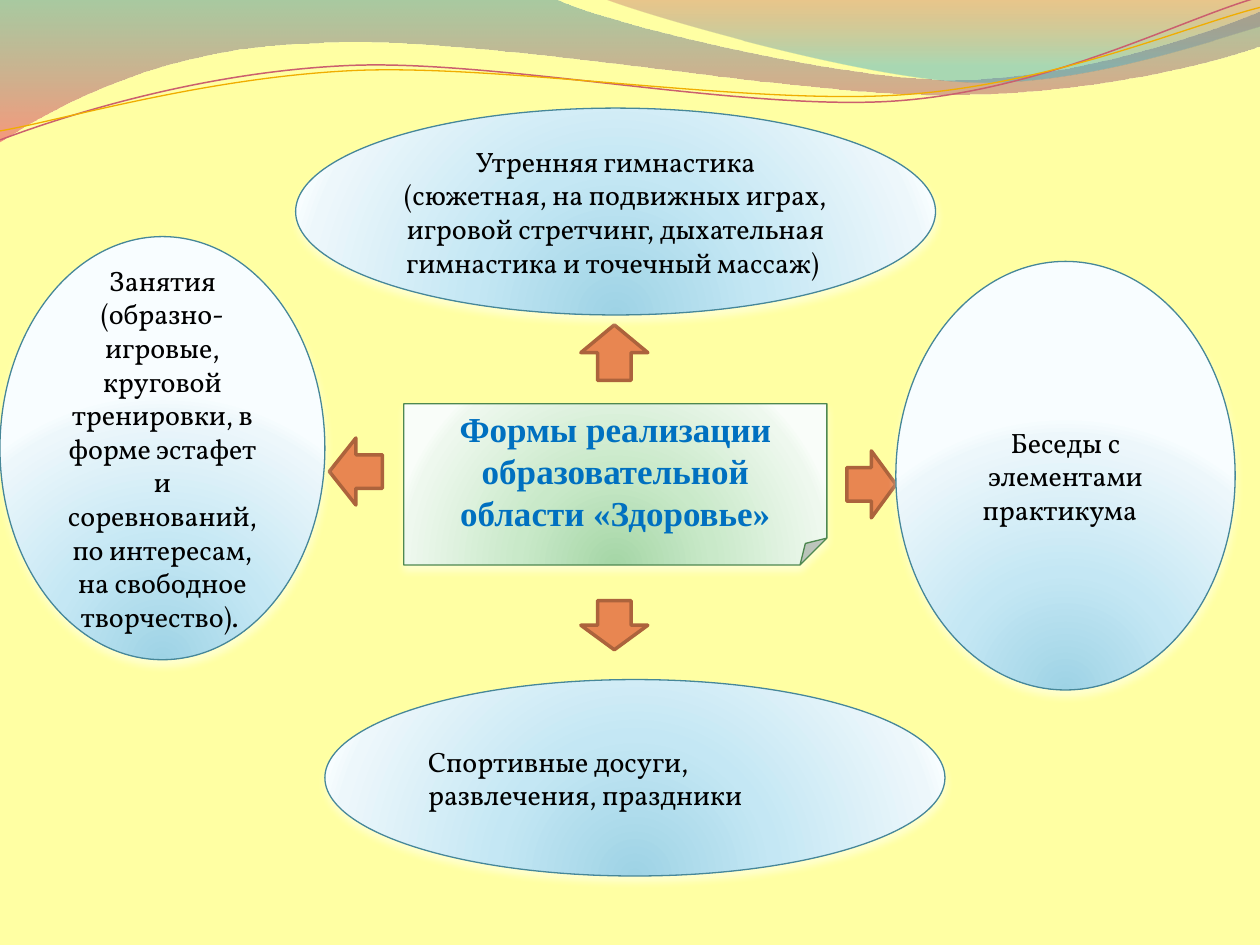
from dataclasses import dataclass
from math import cos, radians, sin
from typing import Optional

from lxml.etree import SubElement
from pptx import Presentation
from pptx.dml.color import RGBColor
from pptx.enum.shapes import MSO_SHAPE
from pptx.enum.text import MSO_ANCHOR, PP_ALIGN
from pptx.oxml.ns import qn
from pptx.util import Cm, Pt


@dataclass(frozen=True)
class Stop:
    position: int
    color: str
    opacity: int = 100


@dataclass(frozen=True)
class TextStyle:
    font: str
    size: int
    color: str
    bold: bool = False


@dataclass(frozen=True)
class PanelStyle:
    stops: tuple
    line: str
    text: TextStyle


@dataclass(frozen=True)
class Theme:
    background: str = "FFFFA3"
    shadow: str = "FFFFFF"
    arrow_fill: str = "E88651"
    arrow_line: str = "AC633C"
    arrow_line_width: float = 2
    panel_line_width: float = 0.75
    title: PanelStyle = PanelStyle(
        (Stop(0, "A5D6A6"), Stop(43, "C9E9C9"), Stop(93, "EEF8EE"), Stop(100, "F9FDF9")),
        "4E8850", TextStyle("Times New Roman", 20, "0070C0", True))
    bubble: PanelStyle = PanelStyle(
        (Stop(0, "9ED3E5"), Stop(43, "C4E7F4"), Stop(93, "EDF7FB"), Stop(100, "F8FDFF")),
        "468798", TextStyle("Vollkorn", 16, "000000"))


@dataclass(frozen=True)
class Wave:
    start: tuple
    segments: tuple
    stops: tuple = ()
    line: Optional[str] = None
    line_width: float = 0
    rotation: float = 0
    center: tuple = (0, 0)


@dataclass(frozen=True)
class Panel:
    box: tuple
    text: str
    style: PanelStyle
    kind: MSO_SHAPE = MSO_SHAPE.OVAL
    alignment: PP_ALIGN = PP_ALIGN.CENTER


@dataclass(frozen=True)
class Arrow:
    box: tuple
    kind: MSO_SHAPE = MSO_SHAPE.UP_ARROW
    rotation: int = 0


THEME = Theme()

WAVES = (
    Wave((0, 0), (
        (11.18, -0.03),
        (12.09, 0.43, 16.87, 1.6, 19.25, 1.6),
        (21.67, 1.6, 24.33, 0.66, 25.4, 0.23),
        (25.43, 0.91),
        (24.97, 1.12, 22.1, 1.93, 18.95, 1.91),
        (15.8, 1.91, 9.7, 0.71, 6.53, 0.86),
        (3.28, 0.91, 1.17, 2.11, -0.03, 2.87),
        (0, 0),
    ), stops=(Stop(0, "3F8A9F", 45), Stop(100, "EF445B", 55))),
    Wave((12.17, -0.03), (
        (12.93, 0.28, 17.32, 1.57, 19.53, 1.65),
        (21.74, 1.75, 24.41, 0.81, 25.4, 0.53),
        (25.4, 0),
        (12.17, -0.03),
    ), stops=(Stop(0, "B84253", 30), Stop(80, "42ABC7", 45))),
    Wave((0, 2.82), (
        (1.22, 2.36, 4.01, 1.45, 7.04, 1.32),
        (10.03, 1.19, 15.06, 2.26, 18.11, 2.03),
        (21.16, 1.8, 23.83, 0.38, 25.35, -0.05),
    ), line="CB5F6E", line_width=0.85, rotation=357.3, center=(12.67, 1.46)),
    Wave((0, 2.64), (
        (1.19, 2.44, 4.17, 1.55, 7.19, 1.42),
        (10.24, 1.3, 15.16, 2.13, 18.21, 1.91),
        (21.23, 1.7, 23.9, 0.53, 25.4, 0.15),
    ), line="F0AD00", line_width=0.75, rotation=357.3, center=(12.69, 1.5)),
)

ARROWS = (
    Arrow((6.5, 8.97, 1.35, 1.07), rotation=270),
    Arrow((11.71, 6.55, 1.35, 1.12)),
    Arrow((16.89, 9.27, 1.35, 0.99), rotation=90),
    Arrow((11.71, 12.11, 1.35, 0.99), MSO_SHAPE.DOWN_ARROW),
)

TITLE = Panel((8.14, 8.14, 8.53, 3.25), "Формы реализации образовательной области «Здоровье»",
              THEME.title, MSO_SHAPE.FOLDED_CORNER)

BUBBLES = (
    Panel((0, 4.77, 6.55, 8.53),
          "Занятия (образно-игровые, круговой тренировки, в форме эстафет и соревнований, "
          "по интересам, на свободное творчество). ", THEME.bubble),
    Panel((5.96, 2.18, 12.9, 4.17),
          "Утренняя гимнастика (сюжетная, на подвижных играх, игровой стретчинг, "
          "дыхательная гимнастика и точечный массаж) ", THEME.bubble),
    Panel((6.55, 13.7, 12.5, 3.96), "Спортивные досуги, развлечения, праздники",
          THEME.bubble, alignment=PP_ALIGN.LEFT),
    Panel((18.06, 5.27, 6.84, 8.64), "Беседы с элементами практикума  ", THEME.bubble),
)


def add_color(parent, color: str, opacity: int) -> None:
    element = SubElement(parent, qn("a:srgbClr"), val=color)
    if opacity < 100:
        SubElement(element, qn("a:alpha"), val=str(opacity * 1000))


def set_gradient(shape, stops: tuple, radial: bool) -> None:
    shape.fill.gradient()
    gradient = shape._element.spPr.find(qn("a:gradFill"))
    for child in list(gradient):
        gradient.remove(child)
    stop_list = SubElement(gradient, qn("a:gsLst"))
    for stop in stops:
        element = SubElement(stop_list, qn("a:gs"), pos=str(stop.position * 1000))
        add_color(element, stop.color, stop.opacity)
    if radial:
        circle = SubElement(gradient, qn("a:path"), {"path": "circle"})
        SubElement(circle, qn("a:fillToRect"), l="50000", t="130000", r="50000", b="-30000")
    else:
        SubElement(gradient, qn("a:lin"), ang="5400000", scaled="0")


def set_line(shape, color: str, width: float) -> None:
    shape.line.color.rgb = RGBColor.from_string(color)
    shape.line.width = Pt(width)


def set_shadow(shape) -> None:
    effects = shape._element.spPr.find(qn("a:effectLst"))
    shadow = SubElement(effects, qn("a:outerShdw"), blurRad=str(Pt(4.5)), dist=str(Pt(3)),
                        dir="5400000", rotWithShape="0")
    add_color(shadow, THEME.shadow, 48)


def frame_points(wave: Wave, values: tuple) -> list:
    angle = radians(-wave.rotation)
    center_x, center_y = wave.center
    points = []
    for x, y in zip(values[::2], values[1::2]):
        dx, dy = x - center_x, y - center_y
        points.append((Cm(center_x + dx * cos(angle) - dy * sin(angle)),
                       Cm(center_y + dx * sin(angle) + dy * cos(angle))))
    return points


def draw_wave(slide, wave: Wave) -> None:
    segments = [frame_points(wave, values) for values in wave.segments]
    builder = slide.shapes.build_freeform(*frame_points(wave, wave.start)[0])
    builder.add_line_segments([points[-1] for points in segments], close=bool(wave.stops))
    shape = builder.convert_to_shape()
    straight_parts = list(shape._element.iter(qn("a:lnTo")))
    for part, points in zip(straight_parts, segments):
        if len(points) == 3:
            curve = SubElement(part.getparent(), qn("a:cubicBezTo"))
            for x, y in points:
                SubElement(curve, qn("a:pt"), x=str(x - shape.left), y=str(y - shape.top))
            part.getparent().replace(part, curve)
    shape.rotation = wave.rotation
    shape.shadow.inherit = False
    if wave.stops:
        set_gradient(shape, wave.stops, radial=False)
        shape.line.fill.background()
    else:
        shape.fill.background()
        set_line(shape, wave.line, wave.line_width)


def draw_arrow(slide, arrow: Arrow) -> None:
    shape = slide.shapes.add_shape(arrow.kind, *map(Cm, arrow.box))
    shape.rotation = arrow.rotation
    shape.shadow.inherit = False
    shape.fill.solid()
    shape.fill.fore_color.rgb = RGBColor.from_string(THEME.arrow_fill)
    set_line(shape, THEME.arrow_line, THEME.arrow_line_width)


def draw_panel(slide, panel: Panel) -> None:
    shape = slide.shapes.add_shape(panel.kind, *map(Cm, panel.box))
    shape.shadow.inherit = False
    set_gradient(shape, panel.style.stops, radial=True)
    set_line(shape, panel.style.line, THEME.panel_line_width)
    set_shadow(shape)
    shape.text_frame.word_wrap = True
    shape.text_frame.vertical_anchor = MSO_ANCHOR.MIDDLE
    paragraph = shape.text_frame.paragraphs[0]
    paragraph.alignment = panel.alignment
    run = paragraph.add_run()
    run.text = panel.text
    style = panel.style.text
    run.font.name, run.font.size, run.font.bold = style.font, Pt(style.size), style.bold
    run.font.color.rgb = RGBColor.from_string(style.color)


def main() -> None:
    presentation = Presentation()
    presentation.slide_width, presentation.slide_height = Cm(25.4), Cm(19.05)
    slide = presentation.slides.add_slide(presentation.slide_layouts[6])
    slide.background.fill.solid()
    slide.background.fill.fore_color.rgb = RGBColor.from_string(THEME.background)
    for wave in WAVES:
        draw_wave(slide, wave)
    draw_panel(slide, TITLE)
    for arrow in ARROWS:
        draw_arrow(slide, arrow)
    for bubble in BUBBLES:
        draw_panel(slide, bubble)
    presentation.save("out.pptx")


if __name__ == "__main__":
    main()
